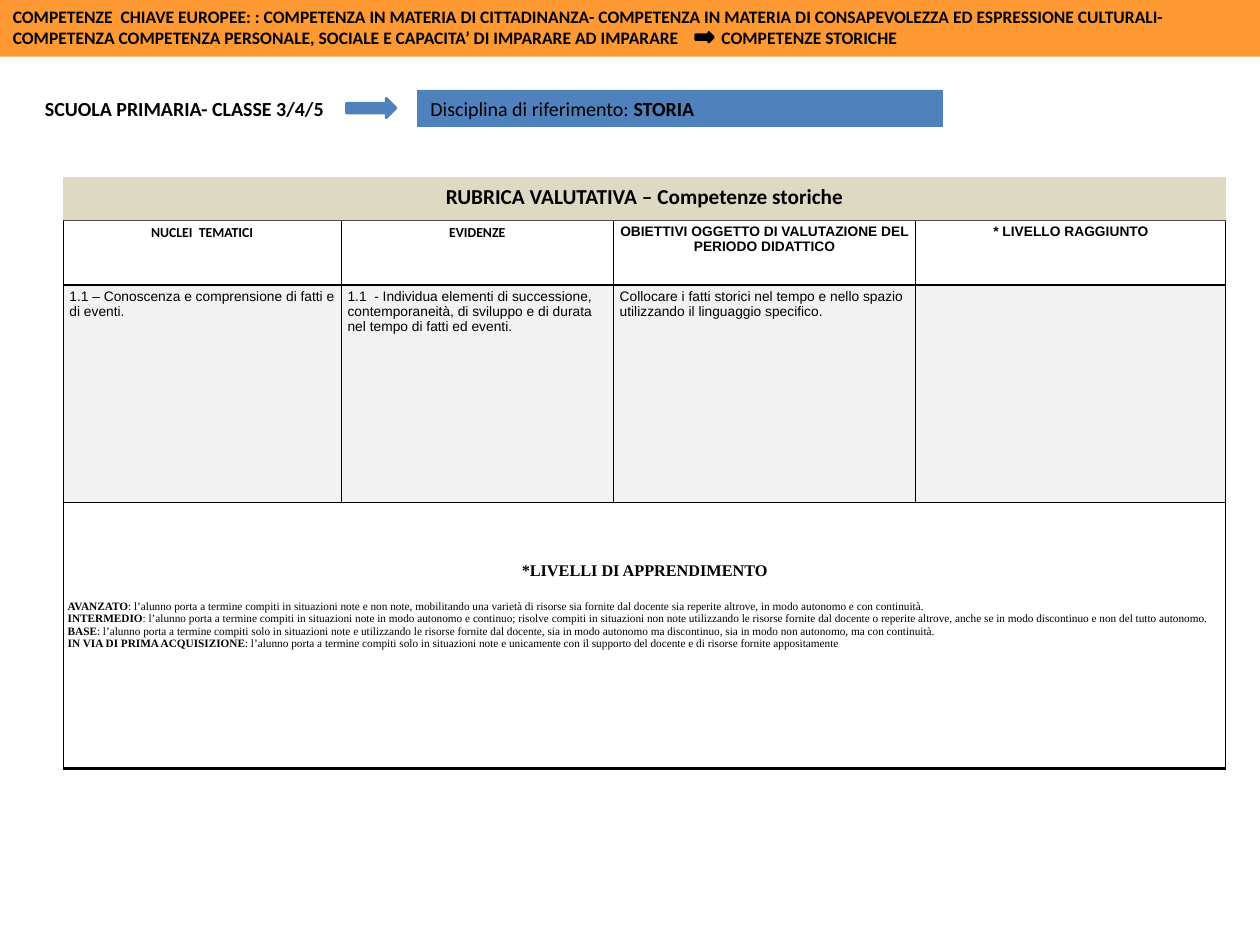
from dataclasses import dataclass
from typing import NamedTuple

from lxml.etree import SubElement
from pptx import Presentation
from pptx.dml.color import RGBColor
from pptx.enum.shapes import MSO_SHAPE as Shape
from pptx.enum.text import MSO_ANCHOR as Anchor, MSO_AUTO_SIZE as AutoSize, PP_ALIGN as Align
from pptx.oxml import parse_xml
from pptx.oxml.ns import nsdecls, qn
from pptx.util import Cm, Pt


@dataclass(frozen=True)
class Theme:
    orange: str = "FF9933"
    blue: str = "4F81BD"
    sand: str = "DDD9C3"
    grey: str = "BFBFBF"
    white: str = "FFFFFF"
    black: str = "000000"
    heading_font: str = "Calibri"
    body_font: str = "Arial"
    levels_font: str = "Times New Roman"
    rubric_size: float = 17
    label_size: float = 16
    banner_size: float = 14
    levels_title_size: float = 13
    cell_size: float = 11
    level_size: float = 9


class Area(NamedTuple):
    left: float
    top: float
    width: float
    height: float

    def lengths(self) -> list:
        return [Cm(value) for value in self]


class Arrow(NamedTuple):
    area: Area
    color: str


class Header(NamedTuple):
    text: str
    font: str


class Level(NamedTuple):
    name: str
    description: str


THEME = Theme()
BANNER = Area(0, 0, 35.56, 1.6)
CLASS_LABEL = Area(0.91, 2.54, 8.8, 1.6)
SUBJECT = Area(11.79, 2.54, 14.81, 1.04)
RUBRIC_TITLE = Area(1.78, 5, 32.82, 1.22)
RUBRIC = Area(1.78, 6.22, 32.82, 15.47)
STORY_TAB = Cm(20)
COLUMN_WIDTHS = (7.85, 7.68, 8.54, 8.75)
ROW_HEIGHTS = (1.83, 6.12, 7.52)

ARROWS = (
    Arrow(Area(9.78, 2.77, 1.4, 0.56), THEME.blue),
    Arrow(Area(19.63, 0.91, 0.51, 0.28), THEME.black),
)
HEADERS = (
    Header("NUCLEI  TEMATICI", THEME.heading_font),
    Header("EVIDENZE", THEME.heading_font),
    Header("OBIETTIVI OGGETTO DI VALUTAZIONE DEL PERIODO DIDATTICO", THEME.body_font),
    Header("* LIVELLO RAGGIUNTO", THEME.body_font),
)
CONTENTS = (
    "1.1 – Conoscenza e comprensione di fatti e di eventi.",
    "1.1  - Individua elementi di successione, contemporaneità, di sviluppo e di durata "
    "nel tempo di fatti ed eventi.",
    "Collocare i fatti storici nel tempo e nello spazio utilizzando il linguaggio specifico.",
    "",
)
LEVELS = (
    Level("AVANZATO", "l’alunno porta a termine compiti in situazioni note e non note, mobilitando "
          "una varietà di risorse sia fornite dal docente sia reperite altrove, in modo autonomo "
          "e con continuità."),
    Level("INTERMEDIO", "l’alunno porta a termine compiti in situazioni note in modo autonomo e "
          "continuo; risolve compiti in situazioni non note utilizzando le risorse fornite dal "
          "docente o reperite altrove, anche se in modo discontinuo e non del tutto autonomo."),
    Level("BASE", "l’alunno porta a termine compiti solo in situazioni note e utilizzando le "
          "risorse fornite dal docente, sia in modo autonomo ma discontinuo, sia in modo non "
          "autonomo, ma con continuità."),
    Level("IN VIA DI PRIMA ACQUISIZIONE", "l’alunno porta a termine compiti solo in situazioni "
          "note e unicamente con il supporto del docente e di risorse fornite appositamente"),
)


def write(para, text: str, *, size: float, font: str = THEME.heading_font,
          bold: bool = False, align: Align = Align.LEFT) -> None:
    """Append one formatted span to a paragraph."""
    para.alignment = align
    span = para.add_run()
    span.text = text
    span.font.name, span.font.size, span.font.bold = font, Pt(size), bold
    span.font.color.rgb = RGBColor.from_string(THEME.black)


def paint(target, color: str) -> None:
    target.fill.solid()
    target.fill.fore_color.rgb = RGBColor.from_string(color)


def prepare_text(box):
    """Set the shared margins of a box and return its first paragraph."""
    frame = box.text_frame
    frame.word_wrap, frame.auto_size = True, AutoSize.NONE
    frame.vertical_anchor = Anchor.TOP
    frame.margin_left = frame.margin_right = Cm(0.36)
    frame.margin_top = frame.margin_bottom = Cm(0.18)
    return frame.paragraphs[0]


def add_box(page, kind: Shape, area: Area, color: str, outline: float = 0):
    box = page.shapes.add_shape(kind, *area.lengths())
    box.shadow.inherit = False
    paint(box, color)
    if outline:
        box.line.color.rgb = RGBColor.from_string(color)
        box.line.width = Pt(outline)
    else:
        box.line.fill.background()
    return box


def add_banner(page) -> None:
    title = page.shapes.title
    title.left, title.top, title.width, title.height = BANNER.lengths()
    paint(title, THEME.orange)
    para = prepare_text(title)
    write(para, "COMPETENZE  CHIAVE EUROPEE: : COMPETENZA IN MATERIA DI CITTADINANZA- COMPETENZA "
          "IN MATERIA DI CONSAPEVOLEZZA ED ESPRESSIONE CULTURALI- COMPETENZA COMPETENZA "
          "PERSONALE, SOCIALE E CAPACITA’ DI IMPARARE AD IMPARARE\tCOMPETENZE STORICHE",
          size=THEME.banner_size, bold=True)
    tabs = SubElement(para._p.get_or_add_pPr(), qn("a:tabLst"))
    SubElement(tabs, qn("a:tab"), pos=str(STORY_TAB), algn="l")


def set_borders(cell, top: float = 1, bottom: float = 1) -> None:
    """Draw the four cell borders; call before filling, as borders come first in the XML."""
    for side, width in (("L", 1), ("R", 1), ("T", top), ("B", bottom)):
        cell._tc.get_or_add_tcPr().append(parse_xml(
            f'<a:ln{side} {nsdecls("a")} w="{Pt(width)}"><a:solidFill>'
            f'<a:srgbClr val="{THEME.black}"/></a:solidFill></a:ln{side}>'))


def set_margins(cell, side: float = 0.18, top: float = 0.1, bottom: float = 0.1) -> None:
    cell.margin_left = cell.margin_right = Cm(side)
    cell.margin_top, cell.margin_bottom = Cm(top), Cm(bottom)


def fill_levels(cell) -> None:
    set_margins(cell, side=0.13, bottom=1.75)
    cell.vertical_anchor = Anchor.MIDDLE
    frame = cell.text_frame
    write(frame.paragraphs[0], "*LIVELLI DI APPRENDIMENTO", size=THEME.levels_title_size,
          font=THEME.levels_font, bold=True, align=Align.CENTER)
    frame.paragraphs[0].space_after = Pt(16)
    for level in LEVELS:
        para = frame.add_paragraph()
        for text, bold in ((level.name, True), (f": {level.description}", False)):
            write(para, text, size=THEME.level_size, font=THEME.levels_font, bold=bold)


def add_rubric(page) -> None:
    table = page.shapes.add_table(len(ROW_HEIGHTS), len(COLUMN_WIDTHS), *RUBRIC.lengths()).table
    table.first_row = table.horz_banding = False
    for row, height in zip(table.rows, ROW_HEIGHTS):
        row.height = Cm(height)
    for index, (width, header, content) in enumerate(zip(COLUMN_WIDTHS, HEADERS, CONTENTS)):
        table.columns[index].width = Cm(width)
        head, body, foot = (table.cell(row, index) for row in range(len(ROW_HEIGHTS)))
        set_borders(head, bottom=2)
        set_borders(body, top=2)
        set_borders(foot, bottom=2)
        head.fill.background()
        paint(body, THEME.grey)
        SubElement(body._tc.tcPr.find(f".//{qn('a:srgbClr')}[@val='{THEME.grey}']"),
                   qn("a:alpha"), val="20000")
        paint(foot, THEME.white)
        set_margins(head)
        set_margins(body)
        write(head.text_frame.paragraphs[0], header.text, size=THEME.cell_size,
              font=header.font, bold=True, align=Align.CENTER)
        if content:
            write(body.text_frame.paragraphs[0], content, size=THEME.cell_size,
                  font=THEME.body_font)
    levels = table.cell(2, 0)
    levels.merge(table.cell(2, len(COLUMN_WIDTHS) - 1))
    fill_levels(levels)


def main() -> None:
    deck = Presentation()
    deck.slide_width, deck.slide_height = Cm(35.56), Cm(26.67)
    page = deck.slides.add_slide(deck.slide_layouts[5])
    add_banner(page)

    label = page.shapes.add_textbox(*CLASS_LABEL.lengths())
    write(prepare_text(label), "SCUOLA PRIMARIA- CLASSE 3/4/5", size=THEME.label_size, bold=True)

    subject = prepare_text(add_box(page, Shape.RECTANGLE, SUBJECT, THEME.blue, outline=0.75))
    write(subject, "Disciplina di riferimento: ", size=THEME.label_size)
    write(subject, "STORIA", size=THEME.label_size, bold=True)

    for arrow in ARROWS:
        add_box(page, Shape.RIGHT_ARROW, arrow.area, arrow.color, outline=2)

    add_rubric(page)
    heading = add_box(page, Shape.RECTANGLE, RUBRIC_TITLE, THEME.sand)
    write(prepare_text(heading), "RUBRICA VALUTATIVA – Competenze storiche",
          size=THEME.rubric_size, bold=True, align=Align.CENTER)
    deck.save("out.pptx")


if __name__ == "__main__":
    main()
